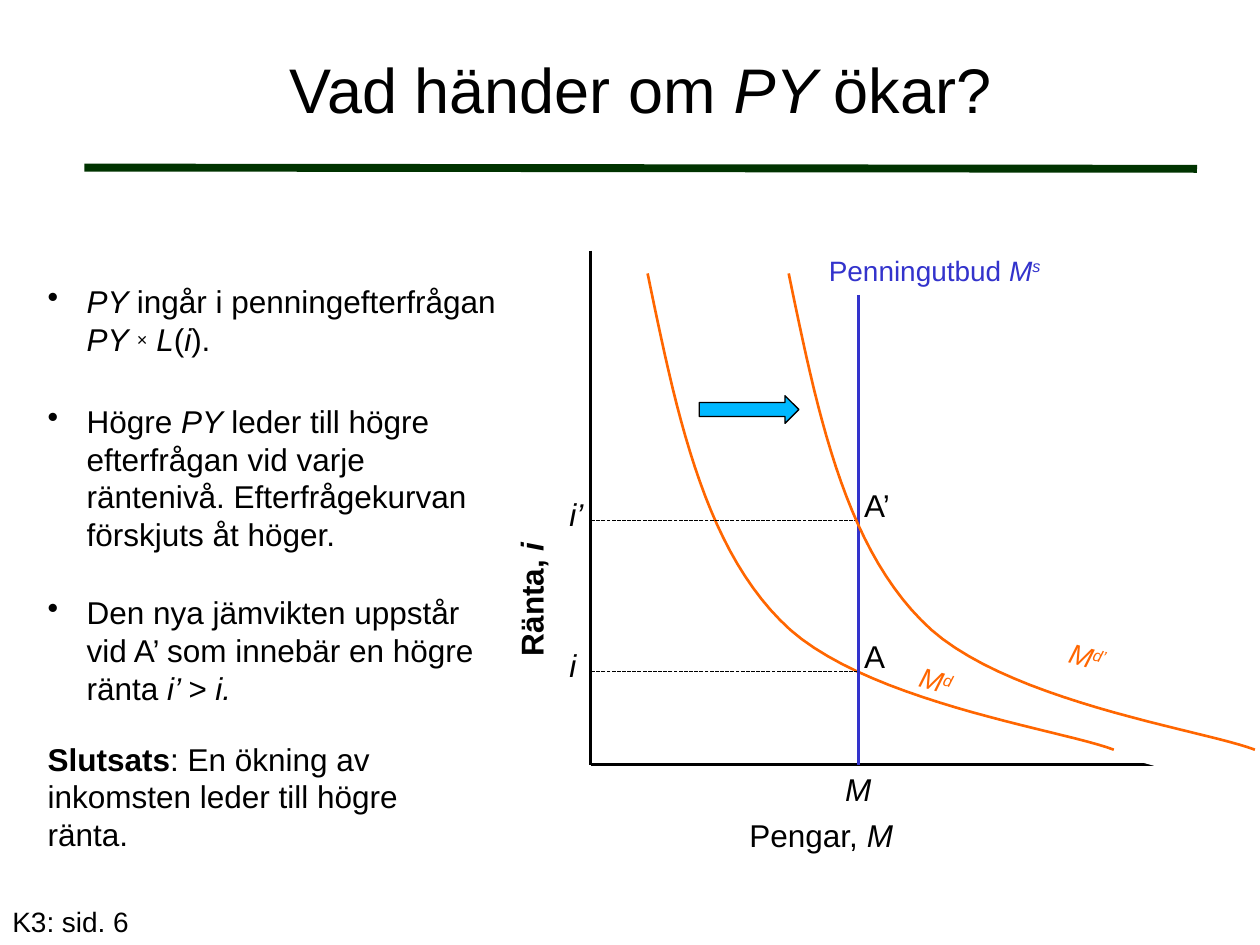
import pptx
import pptx.util
import pptx.dml.color
import pptx.enum.dml
import pptx.enum.shapes
import pptx.enum.text
import pptx.oxml
import pptx.oxml.ns
from lxml import etree

Inches = pptx.util.Inches
Pt = pptx.util.Pt
RGBColor = pptx.dml.color.RGBColor
Align = pptx.enum.text.PP_ALIGN
Anchor = pptx.enum.text.MSO_ANCHOR

BLACK = RGBColor(0, 0, 0)
WHITE = RGBColor(0xFF, 0xFF, 0xFF)
GREEN = RGBColor(0x00, 0x33, 0x00)
ORANGE = RGBColor(0xFF, 0x66, 0x00)
BLUE = RGBColor(0x33, 0x33, 0xCC)
CYAN = RGBColor(0x00, 0xB8, 0xFF)

RAISE = {"^": 30, "~": 14}  # percent above the baseline


def write(frame, runs, size=18, color=BLACK, align=Align.LEFT):
    """Fill the first paragraph; a run is text or (text, flags: i, b, ^, ~)."""
    par = frame.paragraphs[0]
    par.alignment = align
    for item in runs:
        text, flags = (item, "") if isinstance(item, str) else item
        run = par.add_run()
        run.text = text
        run.font.name = "Arial"
        run.font.size = Pt(size)
        run.font.color.rgb = color
        run.font.italic = "i" in flags
        run.font.bold = "b" in flags
        for mark, rise in RAISE.items():
            if mark in flags:
                run.font._element.set("baseline", str(rise * 1000))
    return par


class Board:
    """The slide and the style of what is drawn on it."""

    def __init__(self, slide):
        self.slide = slide
        self.shapes = slide.shapes

    def title(self, runs, x, y, w, h):
        box = self.shapes.title
        box.left, box.top = Inches(x), Inches(y)
        box.width, box.height = Inches(w), Inches(h)
        box.text_frame.vertical_anchor = Anchor.MIDDLE
        write(box.text_frame, runs, size=36, align=Align.CENTER)

    def text(self, runs, x, y, w, h, wrap=True, fill=None, turn=0, **style):
        box = self.shapes.add_textbox(Inches(x), Inches(y), Inches(w), Inches(h))
        box.text_frame.word_wrap = wrap
        box.rotation = turn
        if fill is not None:
            box.fill.solid()
            box.fill.fore_color.rgb = fill
        return write(box.text_frame, runs, **style)

    def note(self, runs, y, w=3.67, h=0.98, bullet=True):
        par = self.text(runs, 0.28, y, w, h)
        par.space_before = par.space_after = Pt(2.5)
        if bullet:
            props = par._p.get_or_add_pPr()
            props.set("marL", str(Inches(0.31)))
            props.set("indent", str(Inches(-0.31)))
            mark = etree.SubElement(props, pptx.oxml.ns.qn("a:buChar"))
            mark.set("char", "•")

    def line(self, x1, y1, x2, y2, color=BLACK, width=1.5, dash=False):
        line = self.shapes.add_connector(
            pptx.enum.shapes.MSO_CONNECTOR.STRAIGHT,
            Inches(x1), Inches(y1), Inches(x2), Inches(y2))
        line.line.color.rgb = color
        line.line.width = Pt(width)
        if dash:
            line.line.dash_style = pptx.enum.dml.MSO_LINE.SQUARE_DOT
        props = line._element.spPr
        etree.SubElement(props, pptx.oxml.ns.qn("a:effectLst"))

    def curve(self, start, parts, shift=0, steps=24):
        """Draw joined cubic Bézier parts as a fine open outline."""
        dots = []
        last = start
        for part in parts:
            for n in range(1, steps + 1):
                t = n / steps
                u = 1 - t
                mix = (u ** 3, 3 * u * u * t, 3 * u * t * t, t ** 3)
                dots.append([sum(m * p[k] for m, p in zip(mix, (last, *part)))
                             for k in (0, 1)])
            last = part[-1]
        pen = self.shapes.build_freeform(
            Inches(start[0] + shift), Inches(start[1]))
        pen.add_line_segments(
            [(Inches(x + shift), Inches(y)) for x, y in dots], close=False)
        shape = pen.convert_to_shape()
        shape.shadow.inherit = False
        shape.fill.background()
        shape.line.color.rgb = ORANGE
        shape.line.width = Pt(1.5)

    def arrow(self, x, y, w, h):
        shape = self.shapes.add_shape(
            pptx.enum.shapes.MSO_SHAPE.RIGHT_ARROW,
            Inches(x), Inches(y), Inches(w), Inches(h))
        shape.shadow.inherit = False
        shape.fill.solid()
        shape.fill.fore_color.rgb = CYAN
        shape.line.color.rgb = BLACK
        shape.line.width = Pt(0.75)

    def level(self, y, point, rate, w, gap):
        """Mark an equilibrium: its point, dashed level and interest rate."""
        self.text([point], MONEY - 0.05, y - 0.32, w, 0.4, wrap=False)
        self.line(MONEY, y, LEFT, y, width=0.75, dash=True)
        self.text([(rate, "i")], LEFT - 0.27, y - 0.25, gap, 0.4, wrap=False)


LEFT, BASE, MONEY = 4.69, 6.07, 6.81  # axes and money supply
START = (5.14, 2.17)
DEMAND = [((5.36, 3.23), (5.57, 4.29), (6.19, 4.92)),
          ((6.80, 5.56), (8.42, 5.79), (8.84, 5.95))]


def main():
    deck = pptx.Presentation()
    deck.slide_width, deck.slide_height = Inches(10), Inches(7.5)
    board = Board(deck.slides.add_slide(deck.slide_layouts[5]))

    board.line(0.67, 1.33, 9.5, 1.34, color=GREEN, width=4.5)
    board.title(["Vad händer om ", ("PY ", "i"), "ökar?"], 0.67, 0.08, 8.83, 1.25)

    board.note([("PY ", "i"), "ingår i penningefterfrågan ", ("PY ", "i"),
                ("×", "~"), (" L", "i"), "(", ("i", "i"), ")."],
               2.19, w=3.86, h=0.77)
    board.note(["Högre ", ("PY ", "i"),
                "leder till högre efterfrågan vid varje räntenivå. "
                "Efterfrågekurvan förskjuts åt höger."], 3.14, h=1.24)
    board.note(["Den nya jämvikten uppstår vid A’ som innebär en högre ränta ",
                ("i’ > i.", "i")], 4.66)
    board.note([("Slutsats", "b"),
                ": En ökning av inkomsten leder till högre ränta."],
               5.82, bullet=False)

    board.text([("Ränta, ", "b"), ("i", "bi")], 3.29, 4.18, 1.85, 0.4,
               fill=WHITE, turn=270)
    board.line(LEFT, 1.99, LEFT, BASE, width=1.75)
    board.line(9.26, BASE, LEFT, BASE)
    board.text(["Pengar, ", ("M", "i")], 5.85, 6.43, 2.77, 0.41, fill=WHITE)

    board.text([("M", "i"), ("d", "i^")], 7.16, 5.53, 2.77, 0.37,
               fill=WHITE, turn=15.6, size=16, color=ORANGE)
    board.curve(START, DEMAND)
    board.level(5.33, "A", "i", 0.37, 0.26)

    board.text(["Penningutbud ", ("M", "i"), ("s", "i^")], 6.48, 1.96, 2.15, 0.37,
               fill=WHITE, size=16, color=BLUE)
    board.line(MONEY, 2.34, MONEY, BASE, color=BLUE, width=1.75)
    board.text([("M", "i")], 6.61, 6.06, 0.41, 0.4, wrap=False)

    board.level(4.13, "A’", "i’", 0.42, 0.34)
    board.text([("M", "i"), ("d’", "i^")], 8.39, 5.03, 0.51, 0.37,
               fill=WHITE, turn=15.6, size=16, color=ORANGE)
    board.curve(START, DEMAND, shift=1.12)
    board.arrow(5.55, 3.14, 0.79, 0.22)

    board.text(["K3: sid. 6"], 0, 7.13, 2.08, 0.37, size=16)
    deck.save("out.pptx")


if __name__ == "__main__":
    main()
